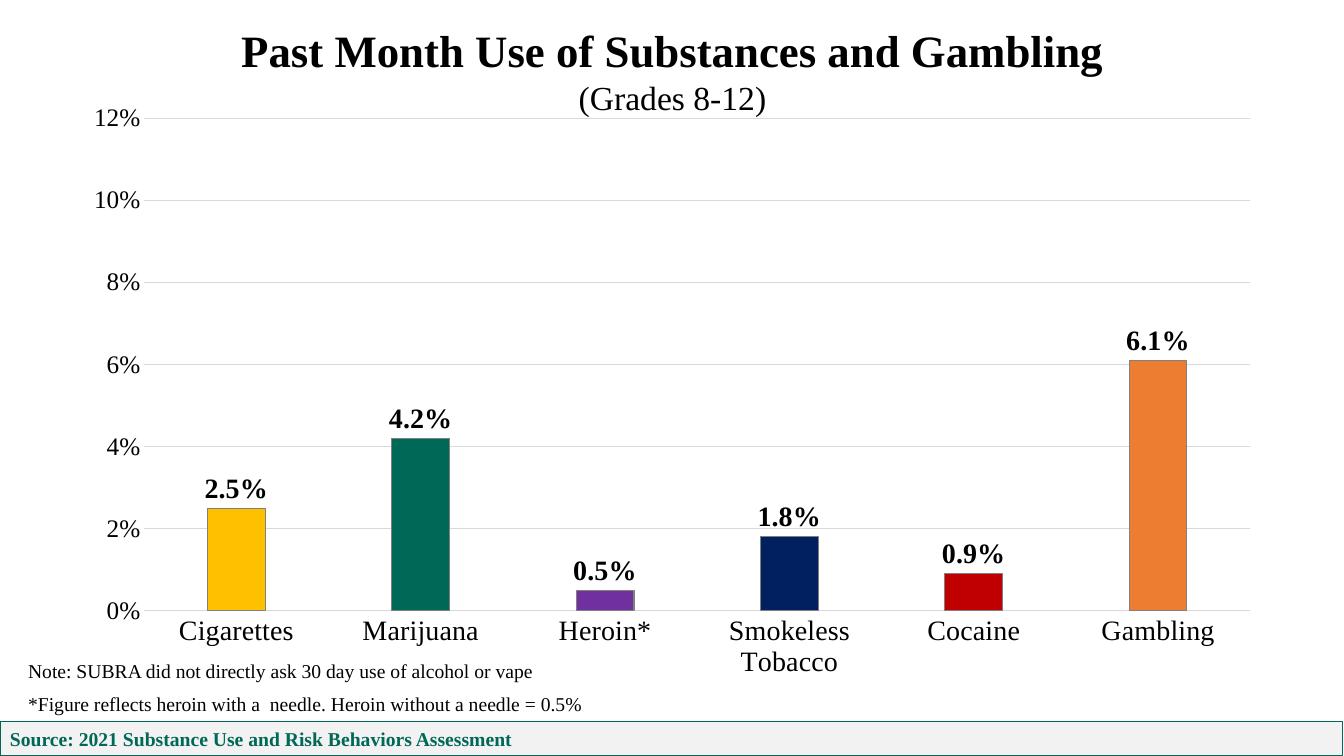
from lxml.etree import SubElement
from pptx import Presentation
from pptx.chart.data import CategoryChartData
from pptx.dml.color import RGBColor
from pptx.enum.chart import XL_CHART_TYPE, XL_LABEL_POSITION, XL_TICK_MARK
from pptx.enum.shapes import MSO_SHAPE
from pptx.enum.text import MSO_ANCHOR, PP_ALIGN
from pptx.oxml.ns import qn
from pptx.util import Inches, Pt

FONT = "Times New Roman"
BLACK, GREEN, LIGHT_GRAY, GRID_GRAY, BAR_EDGE = "000000", "006857", "F2F2F2", "D9D9D9", "808080"

SUBSTANCES = [
    ("Cigarettes", 0.025, "FFC000"),
    ("Marijuana", 0.042, GREEN),
    ("Heroin*", 0.005, "7030A0"),
    ("Smokeless Tobacco", 0.018, "002060"),
    ("Cocaine", 0.009, "C00000"),
    ("Gambling", 0.061, "ED7D31"),
]


def color(hex_code):
    return RGBColor.from_string(hex_code)


def style_font(font, size, hex_code=BLACK, bold=False):
    font.name = FONT
    font.size = Pt(size)
    font.bold = bold
    font.color.rgb = color(hex_code)


def style_line(line, hex_code):
    line.color.rgb = color(hex_code)
    line.width = Pt(0.75)


def write(shape, spans, align=PP_ALIGN.LEFT, spacing=1.0):
    """Fill a shape with one paragraph of (text, size, colour, bold) spans."""
    shape.text_frame.word_wrap = True
    para = shape.text_frame.paragraphs[0]
    para.alignment = align
    para.line_spacing = spacing
    for text, size, hex_code, bold in spans:
        span = para.add_run()
        span.text = text
        style_font(span.font, size, hex_code, bold)


def add_text(page, left, top, width, height, spans, **layout):
    box = page.shapes.add_textbox(Inches(left), Inches(top), Inches(width), Inches(height))
    write(box, spans, **layout)


def place_plot(chart, **fractions):
    """Fix the inner plot area as fractions of the chart frame."""
    plot_area = chart._chartSpace.chart.plotArea
    for old in plot_area.findall(qn("c:layout")):
        plot_area.remove(old)
    layout = SubElement(plot_area, qn("c:layout"))
    plot_area.insert(0, layout)
    manual = SubElement(layout, qn("c:manualLayout"))
    settings = {"layoutTarget": "inner", "xMode": "edge", "yMode": "edge", **fractions}
    for name, value in settings.items():
        SubElement(manual, qn(f"c:{name}")).set("val", str(value))


def style_axes(chart):
    for axis, size in ((chart.category_axis, 20), (chart.value_axis, 18)):
        axis.major_tick_mark = axis.minor_tick_mark = XL_TICK_MARK.NONE
        style_font(axis.tick_labels.font, size)
    style_line(chart.category_axis.format.line, GRID_GRAY)

    values = chart.value_axis
    values.minimum_scale, values.maximum_scale, values.major_unit = 0, 0.12, 0.02
    values.tick_labels.number_format = "0%"
    values.tick_labels.number_format_is_linked = False
    values.format.line.fill.background()
    style_line(values.major_gridlines.format.line, GRID_GRAY)


def style_bars(plot):
    plot.gap_width = 219
    plot.overlap = -27
    plot.vary_by_categories = False
    for index, (_, _, fill) in enumerate(SUBSTANCES):
        bar = plot.series[0].points[index].format
        bar.fill.solid()
        bar.fill.fore_color.rgb = color(fill)
        style_line(bar.line, BAR_EDGE)

    plot.has_data_labels = True
    labels = plot.data_labels
    labels.show_value = True
    labels.number_format = "0.0%"
    labels.number_format_is_linked = False
    labels.position = XL_LABEL_POSITION.OUTSIDE_END
    style_font(labels.font, 20, bold=True)


def add_use_chart(page):
    data = CategoryChartData(number_format="0.0%")
    data.categories = [name for name, _, _ in SUBSTANCES]
    data.add_series("Series 1", [value for _, value, _ in SUBSTANCES])
    chart = page.shapes.add_chart(
        XL_CHART_TYPE.COLUMN_CLUSTERED,
        Inches(0.69), Inches(0.92), Inches(11.95), Inches(5.93), data,
    ).chart
    chart.has_title = False
    chart.has_legend = False
    style_font(chart.font, 10)
    style_axes(chart)
    style_bars(chart.plots[0])
    place_plot(chart, x=0.062, y=0.043, w=0.918, h=0.824)


def add_source_bar(page, text):
    bar = page.shapes.add_shape(
        MSO_SHAPE.RECTANGLE, Inches(0), Inches(7.16), Inches(13.32), Inches(0.34))
    bar.shadow.inherit = False
    bar.fill.solid()
    bar.fill.fore_color.rgb = color(LIGHT_GRAY)
    style_line(bar.line, GREEN)
    bar.text_frame.vertical_anchor = MSO_ANCHOR.TOP
    write(bar, [(text, 14, GREEN, True)])


def main():
    deck = Presentation()
    deck.slide_width, deck.slide_height = Inches(13.33), Inches(7.5)
    page = deck.slides.add_slide(deck.slide_layouts[6])

    # Title
    add_text(page, 2.11, 0.18, 9.12, 1.04, [
        ("Past Month Use of Substances and Gambling ", 32, BLACK, True),
        ("(Grades 8-12)", 24, BLACK, False),
    ], align=PP_ALIGN.CENTER)

    # Chart
    add_use_chart(page)

    # Footnotes
    for top, note in (
        (6.7, "*Figure reflects heroin with a  needle. Heroin without a needle = 0.5%"),
        (6.37, "Note: SUBRA did not directly ask 30 day use of alcohol or vape"),
    ):
        add_text(page, 0.18, top, 5.93, 0.42, [(note, 14, BLACK, False)], spacing=1.5)

    # Source bar
    add_source_bar(page, "Source: 2021 Substance Use and Risk Behaviors Assessment")

    deck.save("out.pptx")


if __name__ == "__main__":
    main()
